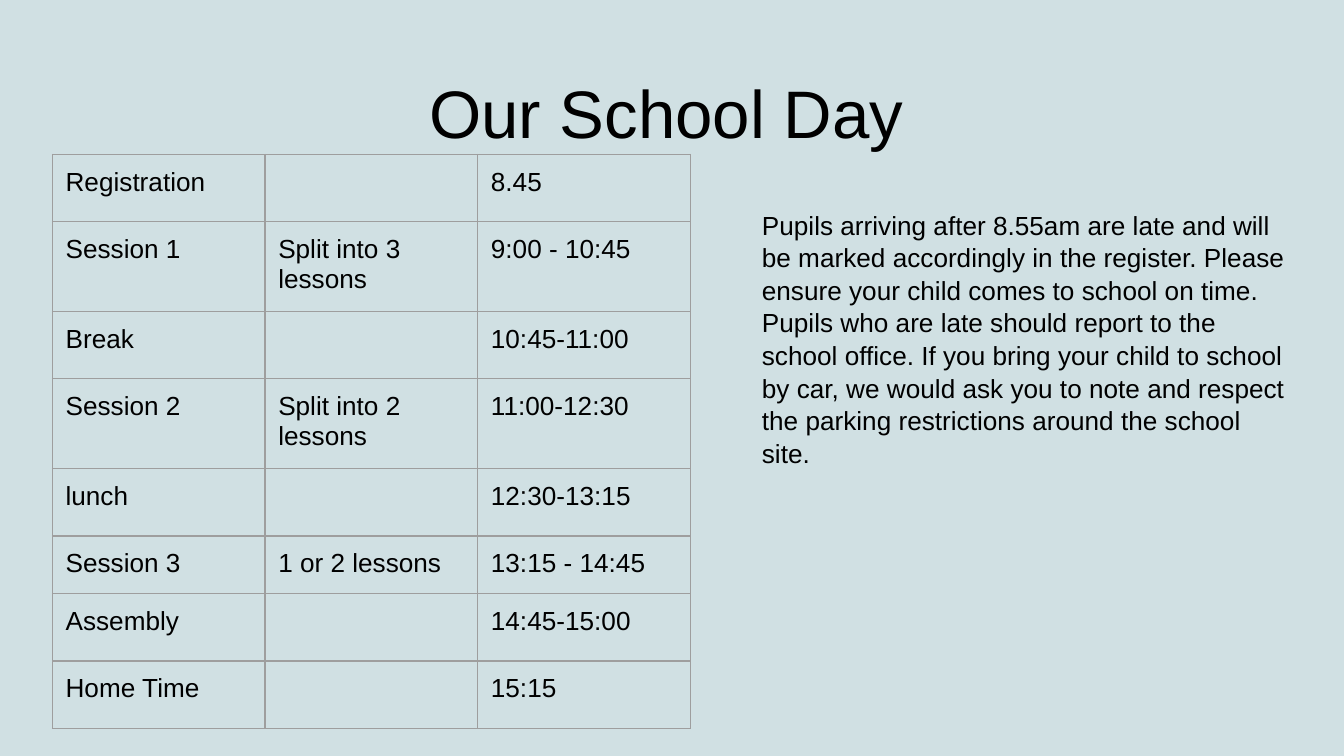
from dataclasses import dataclass

from lxml import etree
from pptx import Presentation
from pptx.dml.color import RGBColor
from pptx.enum.text import MSO_ANCHOR, MSO_AUTO_SIZE, PP_ALIGN
from pptx.oxml.ns import qn
from pptx.util import Cm, Pt

CENTER, LEFT = PP_ALIGN.CENTER, PP_ALIGN.LEFT
MIDDLE, TOP = MSO_ANCHOR.MIDDLE, MSO_ANCHOR.TOP
NO_AUTOFIT, GROW = MSO_AUTO_SIZE.NONE, MSO_AUTO_SIZE.SHAPE_TO_FIT_TEXT
BLANK_LAYOUT = 6


@dataclass(frozen=True)
class Theme:
    font: str = "Arial"
    background: str = "D0E0E3"
    ink: str = "000000"
    grid: str = "9E9E9E"
    grid_width: float = 0.75
    title_size: int = 36
    body_size: int = 14
    inset: float = 0.25


def set_all(target, values):
    for name, value in values.items():
        setattr(target, name, value)


class SlideBuilder:
    def __init__(self, slide, theme):
        self.slide = slide
        self.theme = theme
        self.insets = {f"margin_{side}": Cm(theme.inset)
                       for side in ("left", "top", "right", "bottom")}

    def background(self):
        fill = self.slide.background.fill
        fill.solid()
        fill.fore_color.rgb = RGBColor.from_string(self.theme.background)

    def styled_run(self, paragraph, text, size):
        run = paragraph.add_run()
        run.text = text
        set_all(run.font, {"name": self.theme.font, "size": Pt(size)})
        run.font.color.rgb = RGBColor.from_string(self.theme.ink)

    def text(self, box, text, size, frame_format, paragraph_format):
        frame = self.slide.shapes.add_textbox(*map(Cm, box)).text_frame
        set_all(frame, {"word_wrap": True, **self.insets, **frame_format})
        paragraph = frame.paragraphs[0]
        set_all(paragraph, paragraph_format)
        self.styled_run(paragraph, text, size)

    def cell_borders(self, cell):
        properties = cell._tc.get_or_add_tcPr()
        for edge in ("a:lnL", "a:lnR", "a:lnT", "a:lnB"):
            line = etree.SubElement(properties, qn(edge),
                                    w=str(Pt(self.theme.grid_width)))
            fill = etree.SubElement(line, qn("a:solidFill"))
            etree.SubElement(fill, qn("a:srgbClr"), val=self.theme.grid)

    def table(self, left, top, column_width, row_heights, rows):
        columns = len(rows[0])
        table = self.slide.shapes.add_table(
            len(rows), columns, Cm(left), Cm(top),
            Cm(column_width * columns), Cm(sum(row_heights))).table
        set_all(table, {"first_row": False, "horz_banding": False})
        for column in table.columns:
            column.width = Cm(column_width)
        for row, height, entries in zip(table.rows, row_heights, rows):
            row.height = Cm(height)
            for cell, entry in zip(row.cells, entries):
                set_all(cell, self.insets)
                self.cell_borders(cell)
                cell.fill.background()
                if entry:
                    self.styled_run(cell.text_frame.paragraphs[0], entry,
                                    self.theme.body_size)


TIMETABLE = [
    ("Registration", "", "8.45"),
    ("Session 1", "Split into 3 lessons", "9:00 - 10:45"),
    ("Break", "", "10:45-11:00"),
    ("Session 2", "Split into 2 lessons", "11:00-12:30"),
    ("lunch", "", "12:30-13:15"),
    ("Session 3", "1 or 2 lessons", "13:15 - 14:45"),
    ("Assembly", "", "14:45-15:00"),
    ("Home Time", "", "15:15"),
]
PLAIN, TWO_LINE, COMPACT = 1.27, 1.7, 1.09
ROW_HEIGHTS = [PLAIN, TWO_LINE, PLAIN, TWO_LINE, PLAIN, COMPACT, PLAIN, PLAIN]

LATENESS_NOTE = (
    "Pupils arriving after 8.55am are late and will be marked accordingly in "
    "the register. Please ensure your child comes to school on time. Pupils "
    "who are late should report to the school office. If you bring your child "
    "to school by car, we would ask you to note and respect the parking "
    "restrictions around the school site."
)


def main():
    presentation = Presentation()
    set_all(presentation, {"slide_width": Cm(25.4), "slide_height": Cm(14.29)})
    slide = presentation.slides.add_slide(
        presentation.slide_layouts[BLANK_LAYOUT])
    theme = Theme()
    builder = SlideBuilder(slide, theme)
    builder.background()

    # Title
    builder.text((0.76, 0.94, 23.67, 2.34), "Our School Day", theme.title_size,
                 {"vertical_anchor": MIDDLE, "auto_size": NO_AUTOFIT},
                 {"alignment": CENTER})

    # Lateness and parking note
    builder.text((14.15, 3.68, 10.52, 5.31), LATENESS_NOTE, theme.body_size,
                 {"vertical_anchor": TOP, "auto_size": GROW},
                 {"alignment": LEFT, "line_spacing": 1.04})

    # Timetable
    builder.table(0.99, 2.92, 4.02, ROW_HEIGHTS, TIMETABLE)

    presentation.save("out.pptx")


if __name__ == "__main__":
    main()
